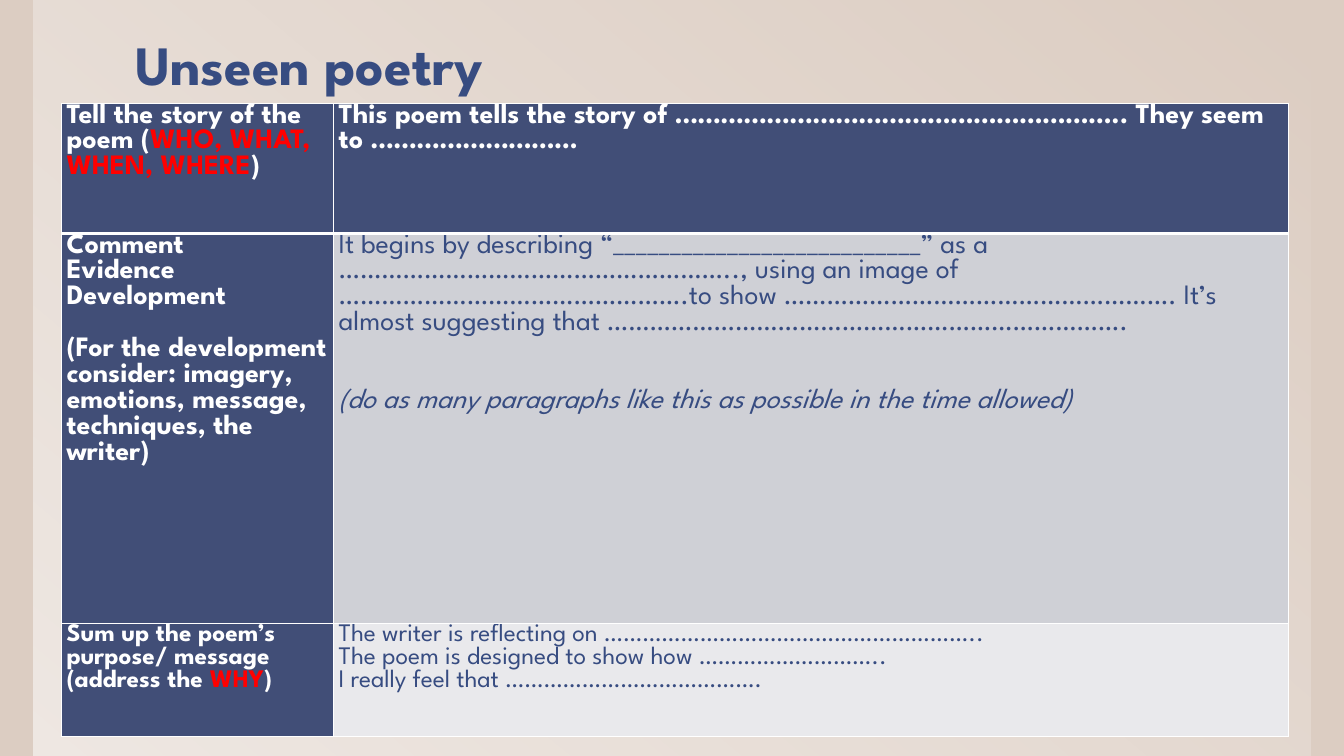
from lxml.etree import SubElement
from pptx import Presentation
from pptx.dml.color import RGBColor
from pptx.enum.shapes import MSO_SHAPE as Shape
from pptx.enum.text import MSO_ANCHOR as Anchor
from pptx.oxml import parse_xml
from pptx.oxml.ns import nsdecls, qn
from pptx.util import Pt

FONT = "League Spartan"
SAND, WHITE, RED = "DCCDC2", "FFFFFF", "FF0000"
BLUE, NAVY, GREY, PALE = "374C81", "414E77", "CFD0D6", "E9E9EC"
LINE = 18.5  # height of one skipped line of table text


def color(value):
    return RGBColor.from_string(value)


def add_text(paragraph, text, size=20, fill=WHITE, bold=True, italic=False):
    run = paragraph.add_run()
    run.text = text
    font = run.font
    font.name, font.size, font.bold, font.italic = FONT, Pt(size), bold, italic
    font.color.rgb = color(fill)


def add_panel(slide):
    """White veil that fades towards the top right."""
    panel = slide.shapes.add_shape(Shape.RECTANGLE, Pt(23.76), 0, Pt(912.24), Pt(540))
    panel.shadow.inherit = False
    panel.line.fill.background()
    panel.fill.background()
    veil = parse_xml(
        f'<a:gradFill {nsdecls("a")} rotWithShape="1"><a:gsLst>'
        f'<a:gs pos="0"><a:srgbClr val="{WHITE}"><a:alpha val="0"/></a:srgbClr></a:gs>'
        f'<a:gs pos="100000"><a:srgbClr val="{WHITE}"><a:alpha val="55000"/></a:srgbClr></a:gs>'
        '</a:gsLst><a:lin ang="7800000" scaled="0"/></a:gradFill>')
    properties = panel._element.spPr
    properties.replace(properties.find(qn("a:noFill")), veil)


def add_title(slide, text):
    frame = slide.shapes.add_textbox(Pt(87.12), Pt(37.44), Pt(799.92), Pt(36.72)).text_frame
    frame.word_wrap = True
    frame.vertical_anchor = Anchor.BOTTOM
    frame.margin_left = frame.margin_right = Pt(9.36)
    frame.margin_top = frame.margin_bottom = Pt(5.04)
    heading = frame.paragraphs[0]
    heading.line_spacing = 0.85
    add_text(heading, text, size=39.6, fill=BLUE)


def set_borders(cell, bottom):
    properties = cell._tc.get_or_add_tcPr()
    for side, width in (("L", 1), ("R", 1), ("T", 1), ("B", bottom)):
        border = SubElement(properties, qn(f"a:ln{side}"), w=str(Pt(width)))
        solid = SubElement(border, qn("a:solidFill"))
        SubElement(solid, qn("a:srgbClr"), val=WHITE)


def fill_cell(cell, background, paragraphs, bottom=1, **text_format):
    """Each paragraph is (space before, [(text, format), ...])."""
    set_borders(cell, bottom)
    cell.fill.solid()
    cell.fill.fore_color.rgb = color(background)
    cell.margin_left = cell.margin_right = Pt(3.6)
    cell.margin_top = cell.margin_bottom = 0
    frame = cell.text_frame
    for index, (gap, runs) in enumerate(paragraphs):
        paragraph = frame.add_paragraph() if index else frame.paragraphs[0]
        if gap:
            paragraph.space_before = Pt(gap)
        for text, extra in runs:
            add_text(paragraph, text, **{**text_format, **extra})


def plain(text, gap=0, **extra):
    return gap, [(text, extra)]


def highlighted(before, key, after):
    return 0, [(before, {}), (key, {"fill": RED}), (after, {})]


def add_plan(slide):
    widths, heights = (194.4, 681.84), (92.88, 278.64, 80.9)
    table = slide.shapes.add_table(
        3, 2, Pt(43.92), Pt(73.9), Pt(sum(widths)), Pt(sum(heights))).table
    for column, width in zip(table.columns, widths):
        column.width = Pt(width)
    for row, height in zip(table.rows, heights):
        row.height = Pt(height)

    # Story
    fill_cell(table.cell(0, 0), NAVY, [
        highlighted("Tell the story of the poem (", "WHO, WHAT, WHEN, WHERE", ")")], bottom=3)
    fill_cell(table.cell(0, 1), NAVY, [plain(
        "This poem tells the story of ………………………………………………….. They seem to ………………………")], bottom=3)

    # Comment, evidence, development
    fill_cell(table.cell(1, 0), NAVY, [
        plain("Comment"), plain("Evidence"), plain("Development"),
        plain("(For the development consider: imagery, emotions, message, "
              "techniques, the writer)", gap=LINE)])
    fill_cell(table.cell(1, 1), GREY, [
        plain("It begins by describing “___________________________” as a "
              "……………………………………………….., using an image of "
              "………………………………………….to show ………………………………………………. "
              "It’s almost suggesting that ……………………………………………………………….",),
        plain("(do as many paragraphs like this as possible in the time allowed)",
              gap=2 * LINE, italic=True)], fill=BLUE, bold=False)

    # Purpose
    fill_cell(table.cell(2, 0), NAVY, [
        highlighted("Sum up the poem’s purpose/ message (address the ", "WHY", ")")], size=18)
    fill_cell(table.cell(2, 1), PALE, [
        plain("The writer is reflecting on ………………………………………………….."),
        plain("The poem is designed to show how ……………………….."),
        plain("I really feel that ………………………………….")], size=18, fill=BLUE, bold=False)


def main():
    deck = Presentation()
    deck.slide_width, deck.slide_height = Pt(960), Pt(540)
    slide = deck.slides.add_slide(deck.slide_layouts[6])
    slide.background.fill.solid()
    slide.background.fill.fore_color.rgb = color(SAND)
    add_panel(slide)
    add_title(slide, "Unseen poetry")
    add_plan(slide)
    deck.save("out.pptx")


if __name__ == "__main__":
    main()
